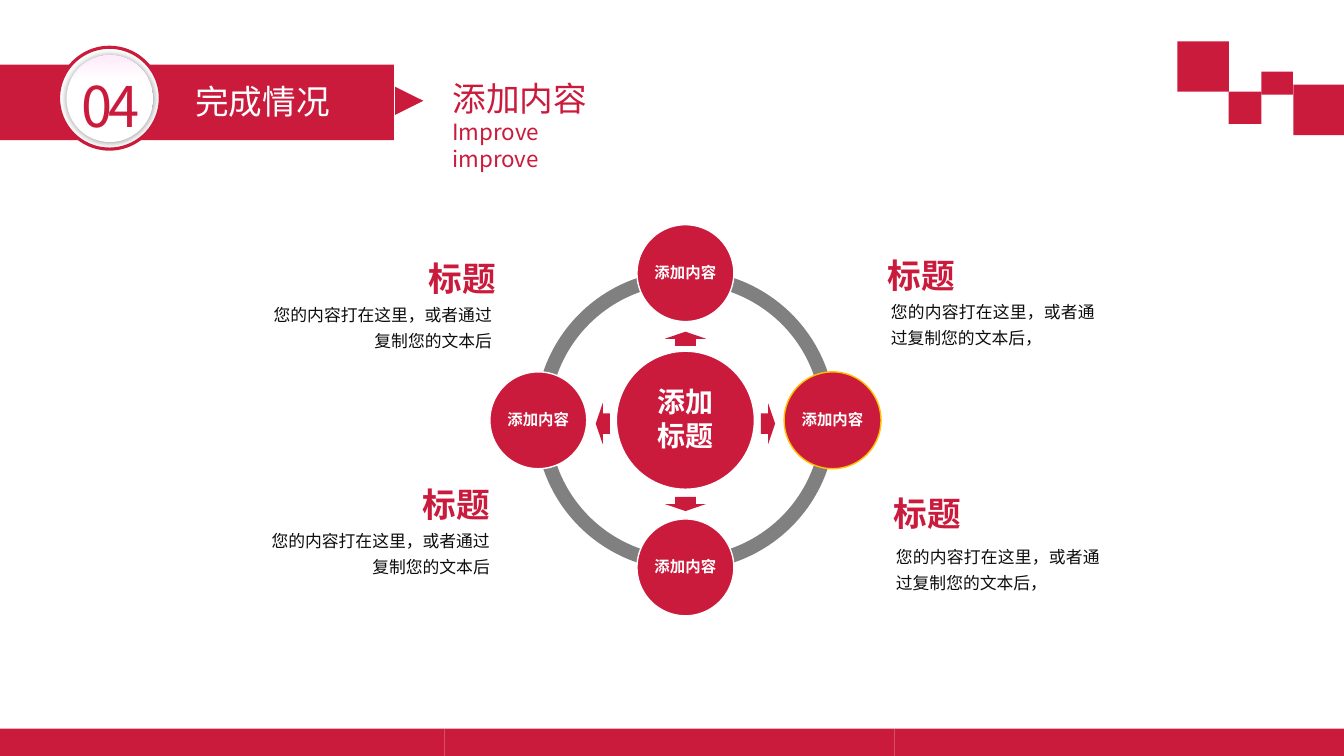
from lxml.etree import SubElement
from pptx import Presentation
from pptx.dml.color import RGBColor
from pptx.enum.shapes import MSO_SHAPE
from pptx.enum.text import MSO_ANCHOR, MSO_AUTO_SIZE, PP_ALIGN
from pptx.oxml.ns import qn
from pptx.util import Pt

FONT = "Noto Sans CJK SC"
RED, WHITE, GREY, INK = "CB1B3D", "FFFFFF", "808080", "0D0D0D"

deck = Presentation()
deck.slide_width, deck.slide_height = Pt(960), Pt(540)
slide = deck.slides.add_slide(deck.slide_layouts[5])


def add_figure(preset, left, top, width, height, fill=RED, outline=None, weight=1):
    figure = slide.shapes.add_shape(preset, Pt(left), Pt(top), Pt(width), Pt(height))
    figure.shadow.inherit = False
    figure.fill.solid()
    figure.fill.fore_color.rgb = RGBColor.from_string(fill)
    if outline:
        figure.line.color.rgb = RGBColor.from_string(outline)
        figure.line.width = Pt(weight)
    else:
        figure.line.fill.background()
    return figure


def write(frame, lines, color, spacing, align=PP_ALIGN.LEFT, bold=False, after=0):
    """Fill a frame with (text, size) lines; spacing is a factor or a list of lengths."""
    frame.word_wrap = True
    frame.auto_size = MSO_AUTO_SIZE.NONE
    for index, (text, size) in enumerate(lines):
        paragraph = frame.paragraphs[0] if index == 0 else frame.add_paragraph()
        paragraph.alignment = align
        paragraph.line_spacing = spacing[index] if isinstance(spacing, list) else spacing
        paragraph.space_before, paragraph.space_after = Pt(0), Pt(after)
        run = paragraph.add_run()
        run.text = text
        run.font.size, run.font.bold, run.font.name = Pt(size), bold, FONT
        run.font.color.rgb = RGBColor.from_string(color)
        SubElement(run.font._element, qn("a:ea")).set("typeface", FONT)


# Title beside the banner
title = slide.shapes.title
title.left, title.top, title.width, title.height = Pt(316), Pt(50.4), Pt(139), Pt(55.4)
title.text_frame.vertical_anchor = MSO_ANCHOR.TOP
write(title.text_frame, [("添加内容", 24), ("Improve improve", 16)], RED, [Pt(30.5), Pt(19.2)])

# Ring with the centre, four satellites and the arrows between them
CENTER_X, CENTER_Y = 489.6, 300.2
RING, HUB, SATELLITE = 214.6, 98.6, 69.2
ORBIT, ARROW_ORBIT = 105.1, 59
ARROW_WIDTH, ARROW_HEIGHT = 29.5, 10.1

ring = add_figure(MSO_SHAPE.DONUT, CENTER_X - RING / 2, CENTER_Y - RING / 2, RING, RING, GREY)
ring.adjustments[0] = 0.047

discs = [(0, 0, HUB, ["添加", "标题"], 20, WHITE)]
for dx, dy, rotation, drop, outline in [
    (0, -1, 0, 0.8, WHITE),
    (1, 0, 90, 2.4, "FFC000"),
    (0, 1, 180, 0.8, WHITE),
    (-1, 0, 270, 2.4, WHITE),
]:
    discs.append((dx, dy, SATELLITE, ["添加内容"], 11, outline))
    arrow = add_figure(
        MSO_SHAPE.UP_ARROW,
        CENTER_X + dx * ARROW_ORBIT - ARROW_WIDTH / 2,
        CENTER_Y + dy * ARROW_ORBIT + drop - ARROW_HEIGHT / 2,
        ARROW_WIDTH, ARROW_HEIGHT)
    arrow.rotation = rotation

for dx, dy, diameter, words, size, outline in discs:
    disc = add_figure(
        MSO_SHAPE.OVAL,
        CENTER_X + dx * ORBIT - diameter / 2, CENTER_Y + dy * ORBIT - diameter / 2,
        diameter, diameter, outline=outline)
    frame = disc.text_frame
    frame.margin_left = frame.margin_right = frame.margin_top = frame.margin_bottom = Pt(1.4)
    frame.vertical_anchor = MSO_ANCHOR.MIDDLE
    write(frame, [(word, size) for word in words], WHITE, 0.9,
          PP_ALIGN.CENTER, bold=True, after=round(size * 0.15, 1))

# Four captions: heading box, then body box, each as left, top, width
LEFT_BODY = "您的内容打在这里，或者通过复制您的文本后"
RIGHT_BODY = LEFT_BODY + "，"
for heading_at, body_at, body, heading_align, body_align in [
    ((282.2, 169.9, 79.2), (182.9, 210.2, 175.7), LEFT_BODY, PP_ALIGN.RIGHT, PP_ALIGN.RIGHT),
    ((627.1, 167.8, 126.7), (629.3, 208.1, 160), RIGHT_BODY, PP_ALIGN.LEFT, PP_ALIGN.JUSTIFY),
    ((217.4, 331.9, 139.7), (181.4, 371.5, 175.7), LEFT_BODY, PP_ALIGN.RIGHT, PP_ALIGN.RIGHT),
    ((631.4, 338.4, 126.7), (632.9, 383, 160), RIGHT_BODY, PP_ALIGN.LEFT, PP_ALIGN.JUSTIFY),
]:
    left, top, width = heading_at
    heading = slide.shapes.add_textbox(Pt(left), Pt(top), Pt(width), Pt(38.5)).text_frame
    heading.margin_top = heading.margin_bottom = 0
    write(heading, [("标题", 24)], RED, [Pt(42.8)], heading_align, bold=True)
    left, top, width = body_at
    detail = slide.shapes.add_textbox(Pt(left), Pt(top), Pt(width), Pt(45.4)).text_frame
    write(detail, [(body, 12)], INK, [Pt(18.6)], body_align)

# Section banner with its numbered badge
add_figure(MSO_SHAPE.RECTANGLE, -2.2, 46.1, 283.7, 54)
pointer = add_figure(MSO_SHAPE.ISOSCELES_TRIANGLE, 282.2, 61.9, 20.2, 20.2)
pointer.rotation = 90
add_figure(MSO_SHAPE.OVAL, 41.8, 33.8, 72.7, 72.7, WHITE, RED, 2.25)
badge = add_figure(MSO_SHAPE.OVAL, 47.5, 39.6, 61.9, 61.9, WHITE)
badge.fill.gradient()
badge.fill.gradient_angle = 90
for stop, position, color in zip(badge.fill.gradient_stops, (0.7, 1), (WHITE, "FFEBFA")):
    stop.position = position
    stop.color.rgb = RGBColor.from_string(color)
effects = badge._element.spPr.find(qn("a:effectLst"))
glow = SubElement(effects, qn("a:outerShdw"), blurRad=str(Pt(5)), dist="0", dir="0")
shade = SubElement(glow, qn("a:srgbClr"), val="000000")
SubElement(shade, qn("a:alpha"), val="40000")

number = slide.shapes.add_textbox(Pt(51.1), Pt(43.2), Pt(69.8), Pt(55.4)).text_frame
write(number, [("04", 40)], RED, [Pt(52.5)])
number.paragraphs[0].runs[0].font._element.set("spc", "-300")
section = slide.shapes.add_textbox(Pt(132.5), Pt(52.6), Pt(149.8), Pt(36)).text_frame
write(section, [("完成情况", 24)], WHITE, [Pt(30.5)])

# Corner blocks and footer strip
for left, top, width, height in [
    (923.8, 60.5, 36.7, 36),
    (841, 29.5, 36.7, 36),
    (877.7, 65.5, 23.4, 23),
    (901, 51.1, 22.6, 16.6),
]:
    add_figure(MSO_SHAPE.RECTANGLE, left, top, width, height)

FOOTER_WIDTH = 321.2
for index in range(3):
    add_figure(MSO_SHAPE.RECTANGLE, -3.6 + index * FOOTER_WIDTH, 520.5, FOOTER_WIDTH, 21)

deck.save("out.pptx")
